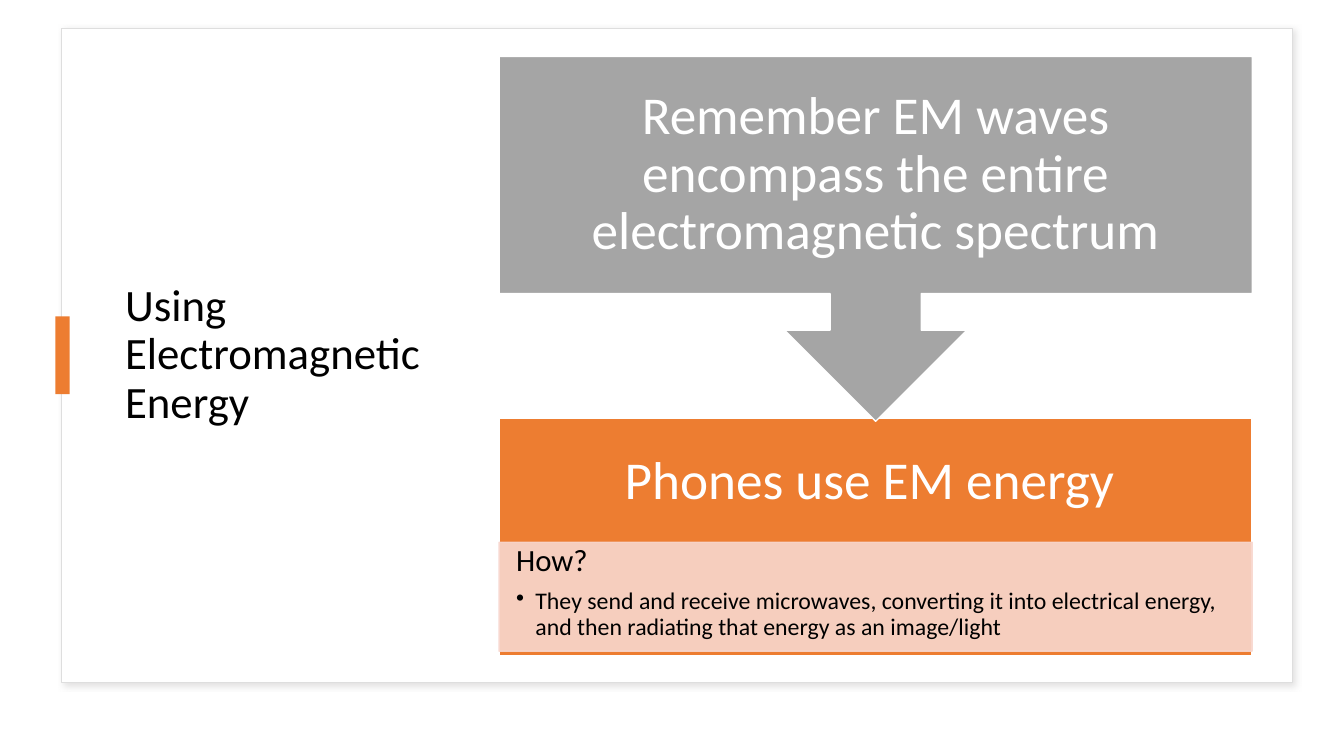
from lxml import etree
from pptx import Presentation
from pptx.dml.color import RGBColor
from pptx.enum import shapes, text
from pptx.oxml import ns
from pptx.util import Inches, Pt

TITLE = "Using Electromagnetic Energy"
REMINDER = "Remember EM waves encompass the entire electromagnetic spectrum"
PHONES = "Phones use EM energy"
QUESTION = "How?"
ANSWER = ("They send and receive microwaves, converting it into electrical energy, "
          "and then radiating that energy as an image/light")

FONT = "Calibri"
COLORS = {"white": "FFFFFF", "black": "000000", "border": "DEDEDE", "shadow": "C5C3C3",
          "orange": "ED7D31", "gray": "A5A5A5", "peach": "F8D7CE"}

# Diagram column: both blocks share one left edge and width
LEFT, WIDTH = 4.95, 7.47
CALLOUT_TOP, CALLOUT_HEIGHT = 0.56, 3.62
CALLOUT_BODY = 0.65  # share of the callout above its arrow
PHONES_TOP, PHONES_HEIGHT = 4.15, 2.36
HEADING_HEIGHT, PANEL_TOP, PANEL_HEIGHT = 1.27, 5.38, 1.08


def rgb(name):
    return RGBColor.from_string(COLORS[name])


def add_element(parent, tag, **attributes):
    return etree.SubElement(parent, ns.qn(tag), attributes)


def add_block(slide, kind, box, fill, line=None):
    shape = slide.shapes.add_shape(kind, *map(Inches, box))
    shape.shadow.inherit = False
    shape.fill.solid()
    shape.fill.fore_color.rgb = rgb(fill)
    if line:
        shape.line.color.rgb = rgb(line)
        shape.line.width = Pt(1)
    else:
        shape.line.fill.background()
    return shape


def set_frame(frame, anchor, horizontal, vertical):
    values = {"word_wrap": True, "vertical_anchor": anchor,
              "margin_left": Inches(horizontal), "margin_right": Inches(horizontal),
              "margin_top": Inches(vertical), "margin_bottom": Inches(vertical)}
    for name, value in values.items():
        setattr(frame, name, value)


def write(paragraph, words, size, color, align=text.PP_ALIGN.LEFT, after=0):
    run = paragraph.add_run()
    run.text = words
    run.font.color.rgb = rgb(color)
    for name, value in {"name": FONT, "size": Pt(size)}.items():
        setattr(run.font, name, value)
    values = {"alignment": align, "line_spacing": 0.9,
              "space_before": Pt(0), "space_after": Pt(after)}
    for name, value in values.items():
        setattr(paragraph, name, value)


def add_heading(slide, words, top, height):
    frame = slide.shapes.add_textbox(*map(Inches, (LEFT, top, WIDTH, height))).text_frame
    set_frame(frame, text.MSO_ANCHOR.MIDDLE, 0.3, 0.3)
    write(frame.paragraphs[0], words, 38, "white", text.PP_ALIGN.CENTER)


def add_frame(slide):
    frame = add_block(slide, shapes.MSO_SHAPE.RECTANGLE, (0.61, 0.28, 12.21, 6.49),
                      "white", "border")
    effects = frame.element.spPr.find(ns.qn("a:effectLst"))
    shadow = add_element(effects, "a:outerShdw", blurRad=str(Pt(4)), dist=str(Pt(3)),
                         dir=str(45 * 60000), algn="tl", rotWithShape="0")
    color = add_element(shadow, "a:srgbClr", val=COLORS["shadow"])
    add_element(color, "a:alpha", val="50000")
    # Behind the title
    slide.shapes.title.element.addprevious(frame.element)


def add_title(slide):
    title = slide.shapes.title
    for name, value in zip(("left", "top", "width", "height"), (1.14, 0.55, 3.27, 5.95)):
        setattr(title, name, Inches(value))
    set_frame(title.text_frame, text.MSO_ANCHOR.MIDDLE, 0.1, 0.05)
    write(title.text_frame.paragraphs[0], TITLE, 32, "black")


def add_answer_panel(slide):
    panel = add_block(slide, shapes.MSO_SHAPE.RECTANGLE,
                      (LEFT, PANEL_TOP, WIDTH, PANEL_HEIGHT), "peach", "peach")
    for color in panel.element.spPr.iter(ns.qn("a:srgbClr")):
        add_element(color, "a:alpha", val="90000")
    frame = panel.text_frame
    set_frame(frame, text.MSO_ANCHOR.TOP, 0.17, 0.03)
    write(frame.paragraphs[0], QUESTION, 22, "black", after=7.7)
    bullet = frame.add_paragraph()
    write(bullet, ANSWER, 17, "black")
    bullet.level = 1
    properties = bullet._p.get_or_add_pPr()
    properties.set("marL", str(Inches(0.19)))
    properties.set("indent", str(-Inches(0.19)))
    add_element(properties, "a:buChar", char="•")


def main():
    presentation = Presentation()
    presentation.slide_width, presentation.slide_height = Inches(13.33), Inches(7.5)
    slide = presentation.slides.add_slide(presentation.slide_layouts[5])

    # Framed title with accent bar
    add_frame(slide)
    add_title(slide)
    add_block(slide, shapes.MSO_SHAPE.RECTANGLE, (0.55, 3.14, 0.14, 0.77), "orange")

    # Phones block
    add_block(slide, shapes.MSO_SHAPE.RECTANGLE,
              (LEFT, PHONES_TOP, WIDTH, PHONES_HEIGHT), "orange", "white")
    add_heading(slide, PHONES + " ", PHONES_TOP, HEADING_HEIGHT)
    add_answer_panel(slide)

    # Reminder block with its arrow pointing down
    callout = add_block(slide, shapes.MSO_SHAPE.UP_ARROW_CALLOUT,
                        (LEFT, CALLOUT_TOP, WIDTH, CALLOUT_HEIGHT), "gray", "white")
    callout.rotation = 180
    add_heading(slide, REMINDER, CALLOUT_TOP, CALLOUT_HEIGHT * CALLOUT_BODY)

    presentation.save("out.pptx")


if __name__ == "__main__":
    main()
